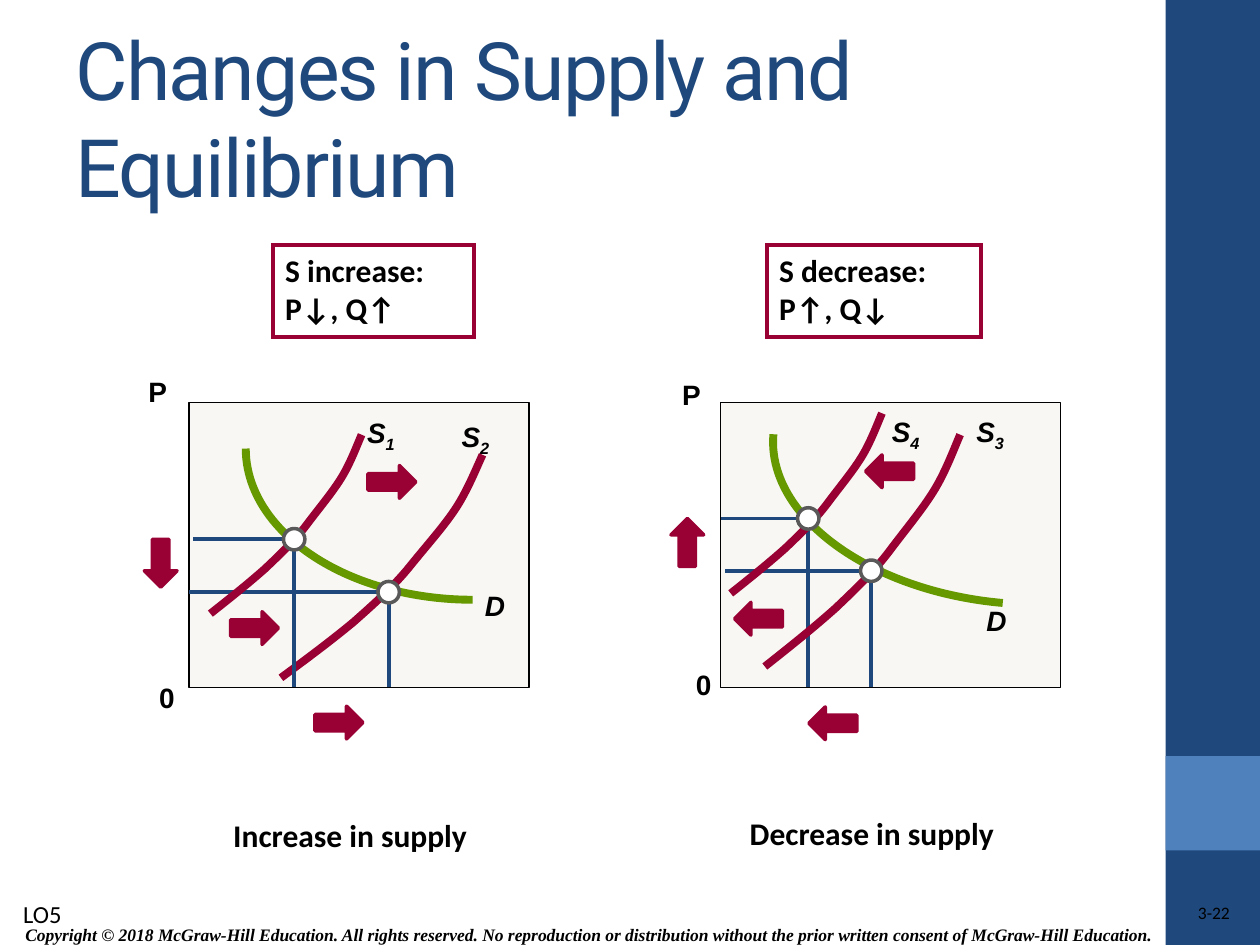
from dataclasses import dataclass

from lxml import etree
from pptx import Presentation
from pptx.dml.color import RGBColor
from pptx.enum.shapes import MSO_CONNECTOR, MSO_SHAPE
from pptx.enum.text import MSO_ANCHOR, MSO_AUTO_SIZE, PP_ALIGN
from pptx.oxml.ns import qn
from pptx.util import Inches, Pt

RECT, ARC = MSO_SHAPE.RECTANGLE, MSO_SHAPE.ARC
OVAL, ARROW = MSO_SHAPE.OVAL, MSO_SHAPE.RIGHT_ARROW
STRAIGHT = MSO_CONNECTOR.STRAIGHT
LEFT, CENTER, RIGHT = PP_ALIGN.LEFT, PP_ALIGN.CENTER, PP_ALIGN.RIGHT
TOP, MIDDLE = MSO_ANCHOR.TOP, MSO_ANCHOR.MIDDLE
NO_AUTOFIT = MSO_AUTO_SIZE.NONE

NAVY, BLUE, CRIMSON, GREEN = "1F497D", "4F81BD", "990033", "669900"
PAPER, WHITE, GRAY, BLACK = "F8F7F3", "FFFFFF", "595959", "000000"

# The slide is a grid of 100 columns and 75 rows.
CELL = Inches(0.1)
FRAME_TOP, FRAME_WIDTH, FRAME_HEIGHT = 31.95, 27, 22.6
AXIS_BOTTOM = 54.5
ARROW_WIDTH, ARROW_HEIGHT = 3.8, 2.6
DOT = 1.7
POINTS_RIGHT, POINTS_DOWN, POINTS_LEFT, POINTS_UP = 0, 90, 180, 270

# Bezier points of a supply curve, as shares of its box.
SUPPLY_SHAPE = [
    (1, 0), (0.96, 0.08), (0.92, 0.17), (0.86, 0.25),
    (0.8, 0.33), (0.72, 0.41), (0.64, 0.5),
    (0.56, 0.59), (0.46, 0.67), (0.36, 0.75),
    (0.24, 0.84), (0.12, 0.92), (0, 1),
]

Box = tuple[float, float, float, float]


@dataclass
class Equilibrium:
    x: float
    y: float
    axis_x: float
    drop_in_front: bool = False


@dataclass
class Label:
    text: str
    x: float
    y: float
    width: float
    subscript: str = ""
    italic: bool = False


@dataclass
class Arrow:
    x: float
    y: float
    direction: int


@dataclass
class Panel:
    frame_left: float
    callout: Box
    effect: tuple[str, str]
    caption: str
    caption_box: Box
    demand: Box
    demand_turn: int
    supplies: list[Box]
    equilibria: list[Equilibrium]
    labels: list[Label]
    arrows: list[Arrow]


PANELS = [
    Panel(
        15, (21.65, 19.45, 16, 7.3), ("S increase:", "P↓, Q↑"),
        "Increase in supply", (14.8, 64.3, 26, 4),
        (19.5, 23.6, 36, 24), 180,
        [(22.3, 36.1, 16, 17.7), (16.7, 34.5, 12, 14.2)],
        [Equilibrium(23.35, 42.8, 15.3, True), Equilibrium(30.85, 47, 15)],
        [Label("0", 11.65, 53.5, 3.2), Label("P", 10.8, 29.2, 3.5),
         Label("D", 37.5, 46.2, 3.6, italic=True),
         Label("S", 28.15, 32.5, 4.3, "1", True),
         Label("S", 35.65, 32.8, 4.3, "2", True)],
        [Arrow(18.3, 48.55, POINTS_RIGHT), Arrow(29.2, 36.95, POINTS_RIGHT),
         Arrow(25, 56.05, POINTS_RIGHT), Arrow(10.85, 43.4, POINTS_DOWN)],
    ),
    Panel(
        57.2, (60.85, 19.45, 17, 7.3), ("S decrease:", "P↑, Q↓"),
        "Decrease in supply", (55.7, 64.1, 27, 4),
        (61.3, 24.4, 38.6, 23.5), 185,
        [(60.7, 34.5, 15.5, 18.4), (58, 32.8, 12, 14.3)],
        [Equilibrium(64.15, 41.15, 57.2), Equilibrium(69.15, 45.3, 57.5)],
        [Label("0", 54.25, 52.5, 3.2), Label("P", 53.15, 29.5, 3.5),
         Label("D", 77.3, 47.45, 3.6, italic=True),
         Label("S", 76.5, 32.45, 4.3, "3", True),
         Label("S", 69.8, 32.45, 4.3, "4", True)],
        [Arrow(58.3, 47.8, POINTS_LEFT), Arrow(68.7, 36.1, POINTS_LEFT),
         Arrow(64.2, 56.1, POINTS_LEFT), Arrow(52.65, 41.75, POINTS_UP)],
    ),
]


def cells(*counts: float) -> list[int]:
    return [round(count * CELL) for count in counts]


def rgb(color: str) -> RGBColor:
    return RGBColor.from_string(color)


def paint(shape, fill: str = "", line: str = "", width: float = 0) -> None:
    """Fill and outline a shape; an empty colour means none."""
    shape.shadow.inherit = False
    if fill:
        shape.fill.solid()
        shape.fill.fore_color.rgb = rgb(fill)
    else:
        shape.fill.background()
    if line:
        shape.line.color.rgb = rgb(line)
        shape.line.width = Pt(width)
    else:
        shape.line.fill.background()


def draw(slide, preset, box: Box, fill="", line="", width=0.0, turn=0):
    shape = slide.shapes.add_shape(preset, *cells(*box))
    shape.rotation = turn
    paint(shape, fill, line, width)
    return shape


def write(shape, lines, size, font="Calibri", color=BLACK, bold=False,
          italic=False, align=LEFT, anchor=TOP, wrap=True) -> None:
    frame = shape.text_frame
    frame.word_wrap, frame.vertical_anchor = wrap, anchor
    frame.text = "\n".join(lines)
    for paragraph in frame.paragraphs:
        paragraph.alignment = align
        style = paragraph.font
        style.name, style.size = font, Pt(size)
        style.bold, style.italic = bold, italic
        style.color.rgb = rgb(color)


def add_text(slide, box: Box, text: str, size: float, **style):
    holder = slide.shapes.add_textbox(*cells(*box))
    write(holder, [text], size, **style)
    return holder


def add_guide(slide, x1: float, y1: float, x2: float, y2: float) -> None:
    guide = slide.shapes.add_connector(STRAIGHT, *cells(x1, y1, x2, y2))
    guide.line.color.rgb = rgb(NAVY)
    guide.line.width = Pt(2.25)
    etree.SubElement(guide._element.spPr, qn("a:effectLst"))


def add_label(slide, label: Label) -> None:
    holder = add_text(slide, (label.x, label.y, label.width, 3.7), label.text, 16,
                      font="Arial", bold=True, italic=label.italic, wrap=False)
    if label.subscript:
        run = holder.text_frame.paragraphs[0].add_run()
        run.text = label.subscript
        run._r.get_or_add_rPr().set("baseline", "-25000")


def add_supply(slide, box: Box) -> None:
    """Outline a supply curve, turning each three points into one Bezier."""
    left, top, width, height = box
    start, *points = [cells(left + x * width, top + y * height)
                      for x, y in SUPPLY_SHAPE]
    builder = slide.shapes.build_freeform(*start)
    builder.add_line_segments(points, close=False)
    curve = builder.convert_to_shape()
    outline = next(curve._element.iter(qn("a:path")))
    segments = outline.findall(qn("a:lnTo"))
    for first in range(0, len(segments), 3):
        bezier = etree.SubElement(outline, qn("a:cubicBezTo"))
        for segment in segments[first:first + 3]:
            bezier.append(segment[0])
            outline.remove(segment)
    paint(curve, line=CRIMSON, width=4.5)


def add_drops(slide, panel: Panel, in_front: bool) -> None:
    for point in panel.equilibria:
        if point.drop_in_front == in_front:
            add_guide(slide, point.x, point.y, point.x, AXIS_BOTTOM)


def add_panel(slide, panel: Panel) -> None:
    draw(slide, RECT, (panel.frame_left, FRAME_TOP, FRAME_WIDTH, FRAME_HEIGHT),
         PAPER, BLACK, 0.75)
    callout = draw(slide, RECT, panel.callout, line=CRIMSON, width=2.25)
    etree.SubElement(callout.line._get_or_add_ln(), qn("a:miter"), lim="800000")
    write(callout, panel.effect, 18, bold=True)
    add_text(slide, panel.caption_box, panel.caption, 18, bold=True, align=CENTER)
    draw(slide, ARC, panel.demand, line=GREEN, width=4.5, turn=panel.demand_turn)
    for label in panel.labels:
        add_label(slide, label)
    for point in panel.equilibria:
        add_guide(slide, point.x, point.y, point.axis_x, point.y)
    add_drops(slide, panel, in_front=False)
    for arrow in panel.arrows:
        draw(slide, ARROW, (arrow.x, arrow.y, ARROW_WIDTH, ARROW_HEIGHT),
             CRIMSON, CRIMSON, 2, arrow.direction)
    for box in panel.supplies:
        add_supply(slide, box)
    add_drops(slide, panel, in_front=True)
    for point in panel.equilibria:
        draw(slide, OVAL, (point.x - DOT / 2, point.y - DOT / 2, DOT, DOT),
             WHITE, GRAY, 2)


def main() -> None:
    deck = Presentation()
    deck.slide_width, deck.slide_height = cells(100, 75)
    slide = deck.slides.add_slide(deck.slide_layouts[5])

    draw(slide, RECT, (92.5, 0, 7.5, 75), NAVY)
    draw(slide, RECT, (92.5, 60, 7.5, 7.5), BLUE)

    title = slide.shapes.title
    title.left, title.top, title.width, title.height = cells(5, 3, 83.3, 12.5)
    write(title, ["Changes in Supply and Equilibrium"], 46, font="Roboto",
          color=NAVY, anchor=MIDDLE)
    title.text_frame.auto_size = NO_AUTOFIT
    title.text_frame.paragraphs[0].runs[0]._r.get_or_add_rPr().set("spc", "-100")

    for panel in PANELS:
        add_panel(slide, panel)

    add_text(slide, (0.85, 70.85, 5.3, 3.4), "LO5", 14)
    add_text(slide, (0.6, 72.8, 92.2, 2.8),
             "Copyright © 2018 McGraw-Hill Education. All rights reserved. "
             "No reproduction or distribution without the prior written consent "
             "of McGraw-Hill Education.",
             10, font="Times New Roman", bold=True, italic=True,
             align=CENTER, anchor=MIDDLE)
    number = add_text(slide, (78.1, 71.55, 19.5, 2), "3-22", 10, align=RIGHT).text_frame
    number.margin_left = number.margin_right = 0
    number.margin_top = number.margin_bottom = 0
    deck.save("out.pptx")


if __name__ == "__main__":
    main()
